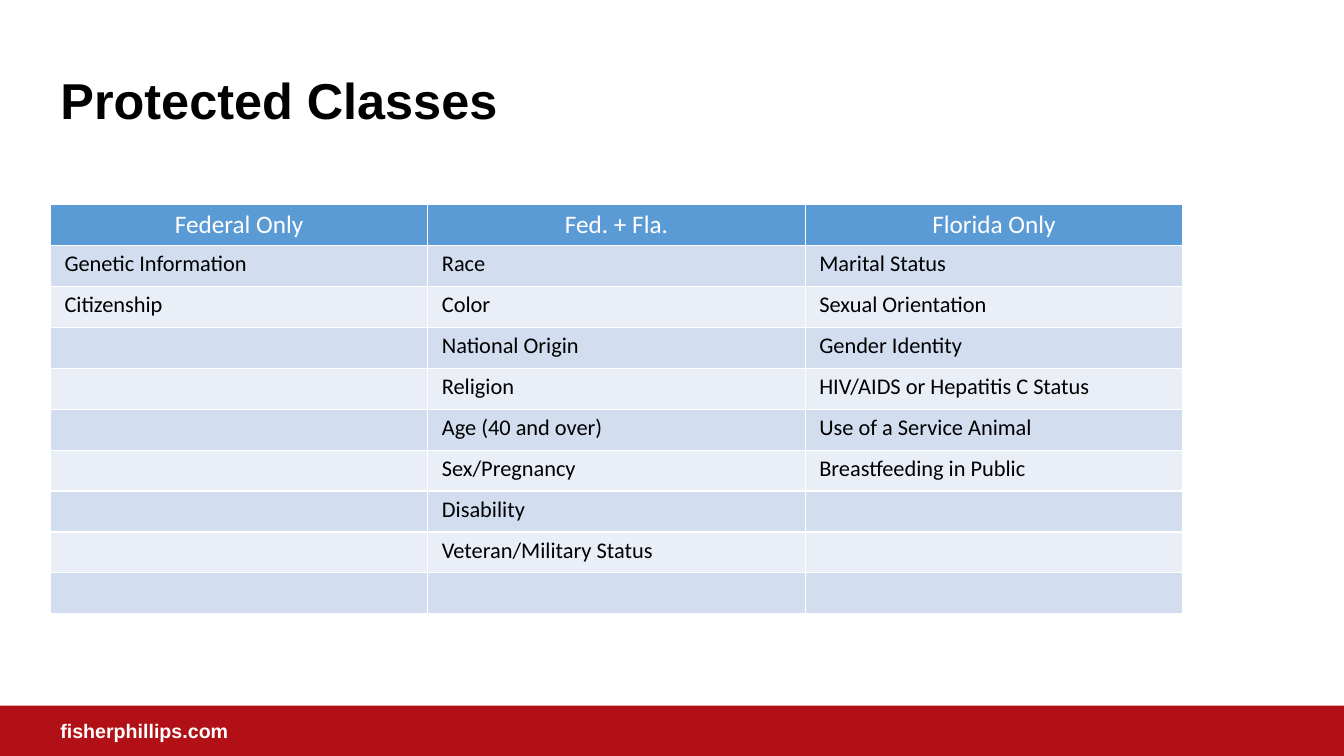
from itertools import zip_longest

from lxml import etree
from pptx import Presentation
from pptx.dml.color import RGBColor
from pptx.enum.shapes import MSO_SHAPE
from pptx.enum.text import MSO_ANCHOR, PP_ALIGN
from pptx.oxml.ns import qn
from pptx.util import Inches, Pt

RECTANGLE = MSO_SHAPE.RECTANGLE
MIDDLE, TOP = MSO_ANCHOR.MIDDLE, MSO_ANCHOR.TOP
LEFT, CENTER = PP_ALIGN.LEFT, PP_ALIGN.CENTER
TITLE_ONLY = 5

COLORS = {
    "white": "FFFFFF",
    "black": "000000",
    "footer": "B11116",
    "header": "5B9BD5",
    "odd": "D2DEEF",
    "even": "EAEFF7",
}

PROTECTED_CLASSES = {
    "Federal Only": ["Genetic Information", "Citizenship"],
    "Fed. + Fla.": [
        "Race", "Color", "National Origin", "Religion", "Age (40 and over)",
        "Sex/Pregnancy", "Disability", "Veteran/Military Status", "",
    ],
    "Florida Only": [
        "Marital Status", "Sexual Orientation", "Gender Identity",
        "HIV/AIDS or Hepatitis C Status", "Use of a Service Animal",
        "Breastfeeding in Public",
    ],
}


def color(name):
    return RGBColor.from_string(COLORS[name])


def write_text(frame, text, *, size, ink="black", font="Arial", bold=False,
               align=LEFT, spacing=None):
    para = frame.paragraphs[0]
    para.alignment = align
    para.line_spacing = spacing
    para.font.size = Pt(size)
    if not text:
        return
    span = para.add_run()
    span.text = text
    span.font.name = font
    span.font.size = Pt(size)
    span.font.bold = bold
    span.font.color.rgb = color(ink)


def add_title(page, text):
    title = page.shapes.title
    title.left, title.top = Inches(0.5), Inches(0.26)
    title.width, title.height = Inches(11.23), Inches(1.53)
    title.text_frame.vertical_anchor = MIDDLE
    write_text(title.text_frame, text, size=36, bold=True, spacing=0.9)


def add_footer(page, text):
    bar = page.shapes.add_shape(RECTANGLE, 0, Inches(7), Inches(13.33), Inches(0.5))
    bar.shadow.inherit = False
    bar.fill.solid()
    bar.fill.fore_color.rgb = color("footer")
    bar.line.fill.background()

    box = page.shapes.add_textbox(Inches(0.5), Inches(7.08), Inches(2.67), Inches(0.34))
    box.text_frame.word_wrap = True
    write_text(box.text_frame, text, size=14, ink="white", bold=True)


def add_borders(cell, name, width):
    properties = cell._tc.get_or_add_tcPr()
    for side in ("a:lnL", "a:lnR", "a:lnT", "a:lnB"):
        line = etree.SubElement(properties, qn(side), w=str(Pt(width)))
        fill = etree.SubElement(line, qn("a:solidFill"))
        etree.SubElement(fill, qn("a:srgbClr"), val=COLORS[name])


def format_cell(cell, fill):
    add_borders(cell, "white", 1)
    cell.fill.solid()
    cell.fill.fore_color.rgb = color(fill)
    cell.margin_left = cell.margin_right = Inches(0.14)
    cell.margin_top = cell.margin_bottom = Inches(0.05)
    cell.vertical_anchor = TOP


def add_class_table(page, columns):
    rows = [tuple(columns), *zip_longest(*columns.values(), fillvalue="")]
    frame = page.shapes.add_table(len(rows), len(columns), Inches(0.5), Inches(2.03),
                                  Inches(11.23), Inches(4.06))
    table = frame.table
    for row_index, row in enumerate(rows):
        for column_index, text in enumerate(row):
            cell = table.cell(row_index, column_index)
            if row_index == 0:
                format_cell(cell, "header")
                write_text(cell.text_frame, text, size=18, ink="white",
                           font="Calibri", align=CENTER)
            else:
                format_cell(cell, "odd" if row_index % 2 else "even")
                write_text(cell.text_frame, text, size=16, font="Calibri")


def main():
    deck = Presentation()
    deck.slide_width, deck.slide_height = Inches(13.33), Inches(7.5)
    page = deck.slides.add_slide(deck.slide_layouts[TITLE_ONLY])

    add_footer(page, "fisherphillips.com")
    add_title(page, "Protected Classes")
    add_class_table(page, PROTECTED_CLASSES)

    deck.save("out.pptx")


if __name__ == "__main__":
    main()
